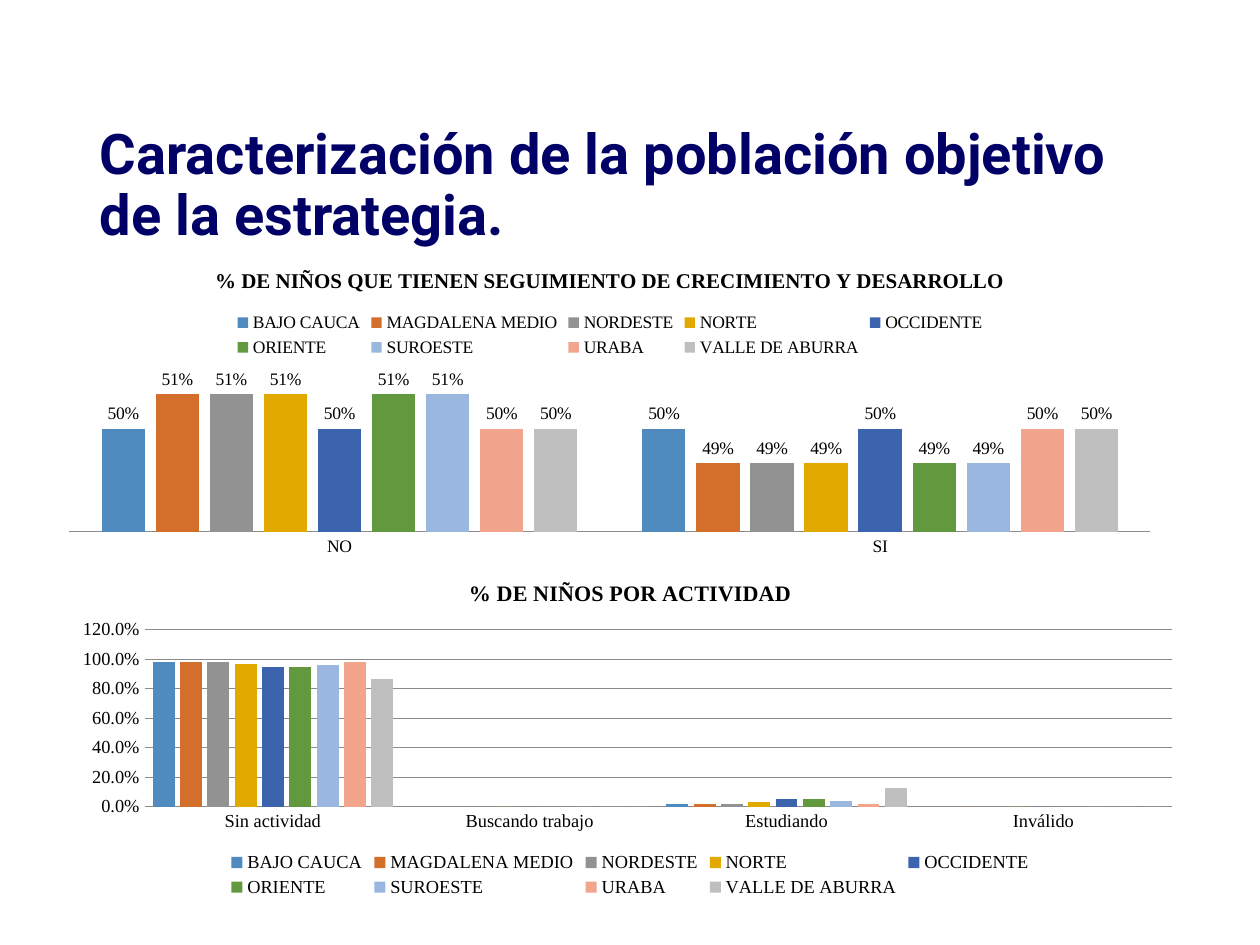
from dataclasses import dataclass

from lxml import etree
from pptx import Presentation
from pptx.chart.data import CategoryChartData
from pptx.dml.color import RGBColor
from pptx.enum import chart as ch, text
from pptx.oxml import ns
from pptx.util import Inches, Pt

FONT = "Times New Roman"
REGIONS = {
    "BAJO CAUCA": "4F8BBF", "MAGDALENA MEDIO": "D46F2B", "NORDESTE": "929292",
    "NORTE": "E2AA00", "OCCIDENTE": "3C64AE", "ORIENTE": "62993E",
    "SUROESTE": "9AB7E0", "URABA": "F2A58C", "VALLE DE ABURRA": "BFBFBF",
}


@dataclass
class ColumnChart:
    title: str
    box: tuple[float, float, float, float]
    plot: tuple[float, float, float, float]  # fractions of the chart box
    categories: list[str]
    rows: list[list[float]]  # one row per category, one value per region
    size: float
    gap: int
    scale: tuple[float, float, float]
    number_format: str
    legend: ch.XL_LEGEND_POSITION
    labels: bool


CHARTS = [
    ColumnChart(
        "% DE NIÑOS QUE TIENEN SEGUIMIENTO DE CRECIMIENTO Y DESARROLLO",
        (0.37, 1.99, 8.94, 2.48), (0.02, 0.35, 0.96, 0.55), ["NO", "SI"],
        [[0.5, 0.51, 0.51, 0.51, 0.5, 0.51, 0.51, 0.5, 0.5],
         [0.5, 0.49, 0.49, 0.49, 0.5, 0.49, 0.49, 0.5, 0.5]],
        10, 150, (0.47, 0.52, 0.01), "0%", ch.XL_LEGEND_POSITION.TOP, True),
    ColumnChart(
        "% DE NIÑOS POR ACTIVIDAD",
        (0.52, 4.46, 8.96, 2.7), (0.07, 0.2, 0.91, 0.52),
        ["Sin actividad", "Buscando trabajo", "Estudiando", "Inválido"],
        [[0.98, 0.98, 0.98, 0.97, 0.95, 0.95, 0.96, 0.98, 0.87],
         [0] * 9,
         [0.02, 0.02, 0.02, 0.03, 0.05, 0.05, 0.04, 0.02, 0.13],
         [0] * 9],
        10.5, 75, (0, 1.2, 0.2), "0.0%", ch.XL_LEGEND_POSITION.BOTTOM, False),
]


def rgb(value: str) -> RGBColor:
    return RGBColor.from_string(value)


def style_font(font, name: str, size: float, color: str, bold: bool = False) -> None:
    font.name, font.size, font.bold = name, Pt(size), bold
    font.color.rgb = rgb(color)


def set_plot_layout(chart, plot: tuple[float, float, float, float]) -> None:
    area = chart._chartSpace.chart.plotArea
    for old in area.findall(ns.qn("c:layout")):
        area.remove(old)
    layout = etree.Element(ns.qn("c:layout"))
    manual = etree.SubElement(layout, ns.qn("c:manualLayout"))
    settings = [("layoutTarget", "inner"), ("xMode", "edge"), ("yMode", "edge")]
    for tag, value in settings + list(zip("xywh", plot)):
        etree.SubElement(manual, ns.qn(f"c:{tag}")).set("val", str(value))
    area.insert(0, layout)


def add_column_chart(slide, item: ColumnChart) -> None:
    data = CategoryChartData(number_format=item.number_format)
    data.categories = item.categories
    for name, values in zip(REGIONS, zip(*item.rows)):
        data.add_series(name, values)
    chart = slide.shapes.add_chart(
        ch.XL_CHART_TYPE.COLUMN_CLUSTERED, *map(Inches, item.box), data).chart
    style_font(chart.font, FONT, item.size, "000000")
    set_plot_layout(chart, item.plot)

    # Title and legend
    tf = chart.chart_title.text_frame
    tf.text = item.title
    style_font(tf.paragraphs[0].runs[0].font, FONT, item.size * 1.2, "000000", True)
    chart.chart_title.include_in_layout = False
    chart.has_legend = True
    chart.legend.position = item.legend
    chart.legend.include_in_layout = False
    style_font(chart.legend.font, FONT, item.size, "000000")

    # Axes
    cat, val = chart.category_axis, chart.value_axis
    for axis in (cat, val):
        axis.major_tick_mark = ch.XL_TICK_MARK.NONE
    cat.format.line.color.rgb = rgb("8B8B8B")
    val.minimum_scale, val.maximum_scale, val.major_unit = item.scale
    val.visible = val.has_major_gridlines = not item.labels
    val.tick_labels.number_format = item.number_format
    val.tick_labels.number_format_is_linked = False
    val.format.line.fill.background()
    if val.has_major_gridlines:
        val.major_gridlines.format.line.color.rgb = rgb("8B8B8B")

    # Columns
    plot = chart.plots[0]
    plot.gap_width, plot.overlap = item.gap, -25
    plot.vary_by_categories = False
    for series, color in zip(plot.series, REGIONS.values()):
        series.format.fill.solid()
        series.format.fill.fore_color.rgb = rgb(color)
        series.invert_if_negative = False
        if item.labels:
            labels = series.data_labels
            labels.show_value = True
            labels.number_format = item.number_format
            labels.number_format_is_linked = False
            labels.position = ch.XL_LABEL_POSITION.OUTSIDE_END
            style_font(labels.font, FONT, item.size, "000000")


def add_title(slide, wording: str) -> None:
    sp = slide.shapes.title
    sp.left, sp.top, sp.width, sp.height = map(Inches, (0.69, 1.09, 8.62, 0.76))
    tf = sp.text_frame
    tf.text = wording
    tf.word_wrap = True
    tf.auto_size = text.MSO_AUTO_SIZE.NONE
    tf.vertical_anchor = text.MSO_ANCHOR.MIDDLE
    p = tf.paragraphs[0]
    p.alignment = text.PP_ALIGN.LEFT
    p.line_spacing = Pt(35)
    style_font(p.runs[0].font, "Roboto", 32, "000066", True)


def main() -> None:
    prs = Presentation()
    prs.slide_width, prs.slide_height = Inches(10), Inches(7.5)
    slide = prs.slides.add_slide(prs.slide_layouts[5])
    add_title(slide, "Caracterización de la población objetivo de la estrategia.")
    for item in CHARTS:
        add_column_chart(slide, item)
    prs.save("out.pptx")


if __name__ == "__main__":
    main()
